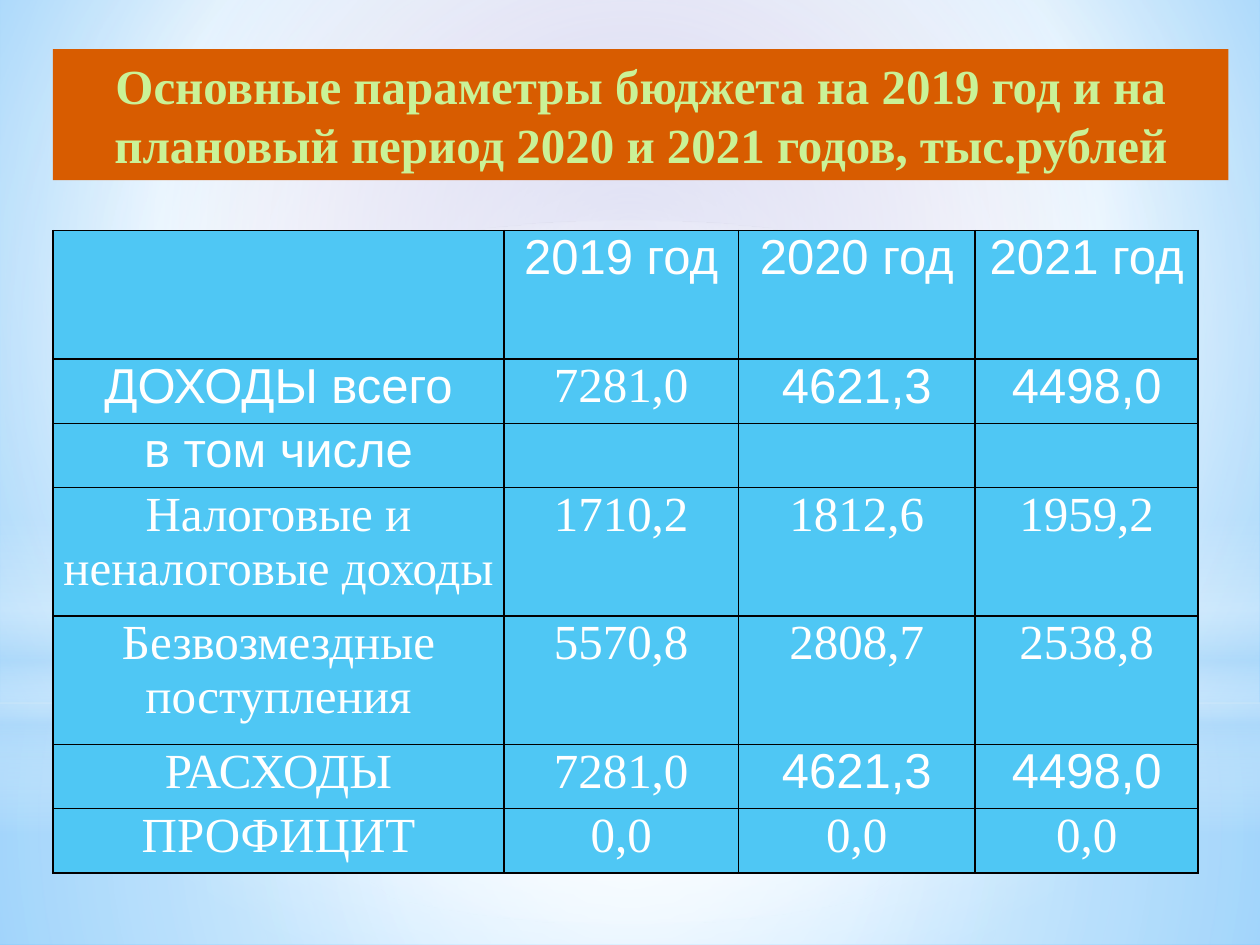
from lxml import etree
from pptx import Presentation
from pptx.dml.color import RGBColor
from pptx.enum.shapes import MSO_SHAPE
from pptx.enum.text import MSO_ANCHOR, PP_ALIGN
from pptx.oxml.ns import qn
from pptx.util import Inches, Pt

RECT, OVAL = MSO_SHAPE.RECTANGLE, MSO_SHAPE.OVAL
CENTER, MIDDLE = PP_ALIGN.CENTER, MSO_ANCHOR.MIDDLE
SERIF, SANS = "Times New Roman", "Arial"

COLORS = {
    "violet": "797DD1", "white": "FFFFFF", "blue": "5BB9FF", "pale": "B4DCFA",
    "banner": "D85C00", "title": "CAF297", "cell": "4FC7F4", "border": "000000",
}

TITLE = ("Основные параметры бюджета на 2019 год и на плановый период "
         "2020 и 2021 годов, тыс.рублей")
ROWS = [
    ["", "2019 год", "2020 год", "2021 год"],
    ["ДОХОДЫ всего", "7281,0", "4621,3", "4498,0"],
    ["в том числе", "", "", ""],
    ["Налоговые и неналоговые доходы", "1710,2", "1812,6", "1959,2"],
    ["Безвозмездные поступления", "5570,8", "2808,7", "2538,8"],
    ["РАСХОДЫ", "7281,0", "4621,3", "4498,0"],
    ["ПРОФИЦИТ", "0,0", "0,0", "0,0"],
]
SANS_TEXTS = {"2019 год", "2020 год", "2021 год", "ДОХОДЫ всего",
              "в том числе", "4621,3", "4498,0"}
COL_WIDTHS = [3.58, 1.86, 1.88, 1.77]
ROW_HEIGHT = 0.51
TALL_ROWS = {0, 3, 4}  # twice the usual height


def rgb(name):
    return RGBColor.from_string(COLORS[name])


def set_gradient(parent, stops, focus=None):
    """Swap a solid fill for a gradient: circular if a focus is given, else vertical."""
    grad = etree.Element(qn("a:gradFill"), rotWithShape="1")
    stop_list = etree.SubElement(grad, qn("a:gsLst"))
    for pos, color, alpha in stops:
        gs = etree.SubElement(stop_list, qn("a:gs"), pos=str(pos * 1000))
        clr = etree.SubElement(gs, qn("a:srgbClr"), val=COLORS[color])
        if alpha < 100:
            etree.SubElement(clr, qn("a:alpha"), val=str(alpha * 1000))
    if focus:
        circle = etree.SubElement(grad, qn("a:path"), {"path": "circle"})
        sides = {side: str(v * 1000) for side, v in zip("ltrb", focus)}
        etree.SubElement(circle, qn("a:fillToRect"), sides)
    else:
        etree.SubElement(grad, qn("a:lin"), ang="5400000", scaled="0")
    parent.replace(parent.find(qn("a:solidFill")), grad)


def add_block(slide, kind, box, color):
    sp = slide.shapes.add_shape(kind, *map(Inches, box))
    sp.shadow.inherit = False
    sp.fill.solid()
    sp.fill.fore_color.rgb = rgb(color)
    sp.line.fill.background()
    return sp


def add_glow(slide, kind, box, stops, focus=None):
    sp = add_block(slide, kind, box, "white")
    set_gradient(sp.element.spPr, stops, focus)


def write(tf, text, font, color, bold=False):
    tf.text = text
    p = tf.paragraphs[0]
    p.alignment = CENTER
    for r in p.runs:
        r.font.name = font
        r.font.size = Pt(28)
        r.font.bold = bold
        r.font.color.rgb = rgb(color)


def set_borders(cell):
    tc_pr = cell._tc.get_or_add_tcPr()
    for i, side in enumerate(("a:lnL", "a:lnR", "a:lnT", "a:lnB")):
        ln = etree.Element(qn(side), w=str(Pt(1)))
        fill = etree.SubElement(ln, qn("a:solidFill"))
        etree.SubElement(fill, qn("a:srgbClr"), val=COLORS["border"])
        tc_pr.insert(i, ln)


def add_background(slide):
    slide.background.fill.solid()
    set_gradient(slide.element.find(".//" + qn("p:bgPr")),
                 [(0, "violet", 100), (60, "white", 100), (100, "blue", 100)],
                 (20, 10, 20, 60))
    center = (50, 50, 50, 50)
    add_glow(slide, RECT, (0, 5.58, 10, 1.92),
             [(0, "white", 91), (37, "white", 76), (100, "pale", 79)], center)
    add_glow(slide, RECT, (0, 0, 10, 5.58),
             [(0, "white", 89), (48, "white", 62), (100, "pale", 79)], center)
    add_glow(slide, RECT, (0, 4.12, 10, 2.5),
             [(0, "white", 0), (29, "white", 30), (45, "pale", 40),
              (55, "white", 26), (65, "pale", 60), (100, "white", 0)])
    add_glow(slide, OVAL, (0, 1.75, 10, 5.58),
             [(0, "white", 100), (56, "white", 0)], center)


def add_title(slide):
    sp = add_block(slide, RECT, (0.42, 0.39, 9.33, 1.04), "banner")
    tf = sp.text_frame
    tf.word_wrap = True
    tf.vertical_anchor = MIDDLE
    write(tf, TITLE, SERIF, "title", bold=True)


def add_budget_table(slide):
    table = slide.shapes.add_table(
        len(ROWS), len(COL_WIDTHS), Inches(0.42), Inches(1.83),
        Inches(sum(COL_WIDTHS)), Inches(5.08)).table
    table.first_row = table.horz_banding = False
    for col, width in zip(table.columns, COL_WIDTHS):
        col.width = Inches(width)
    for i, texts in enumerate(ROWS):
        table.rows[i].height = Inches(ROW_HEIGHT * (2 if i in TALL_ROWS else 1))
        for j, text in enumerate(texts):
            cell = table.cell(i, j)
            narrow = i < 3 or (i == 5 and j > 0)
            cell.margin_left = cell.margin_right = Inches(0.05 if narrow else 0.07)
            cell.margin_top = cell.margin_bottom = 0
            cell.fill.solid()
            cell.fill.fore_color.rgb = rgb("cell")
            set_borders(cell)
            write(cell.text_frame, text, SANS if text in SANS_TEXTS else SERIF, "white")


def main():
    prs = Presentation()
    prs.slide_width, prs.slide_height = Inches(10), Inches(7.5)
    slide = prs.slides.add_slide(prs.slide_layouts[6])
    add_background(slide)
    add_title(slide)
    add_budget_table(slide)
    prs.save("out.pptx")


if __name__ == "__main__":
    main()
